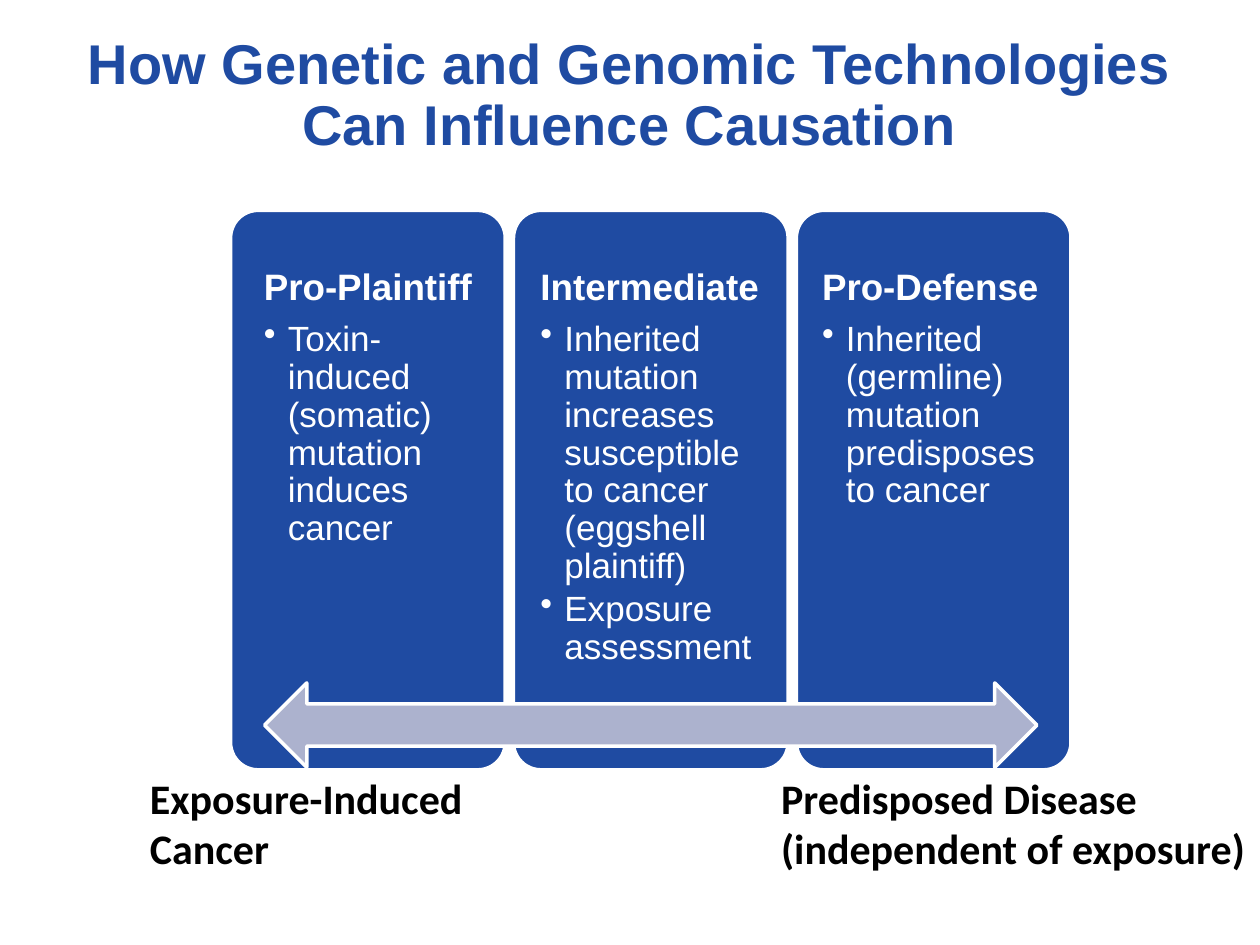
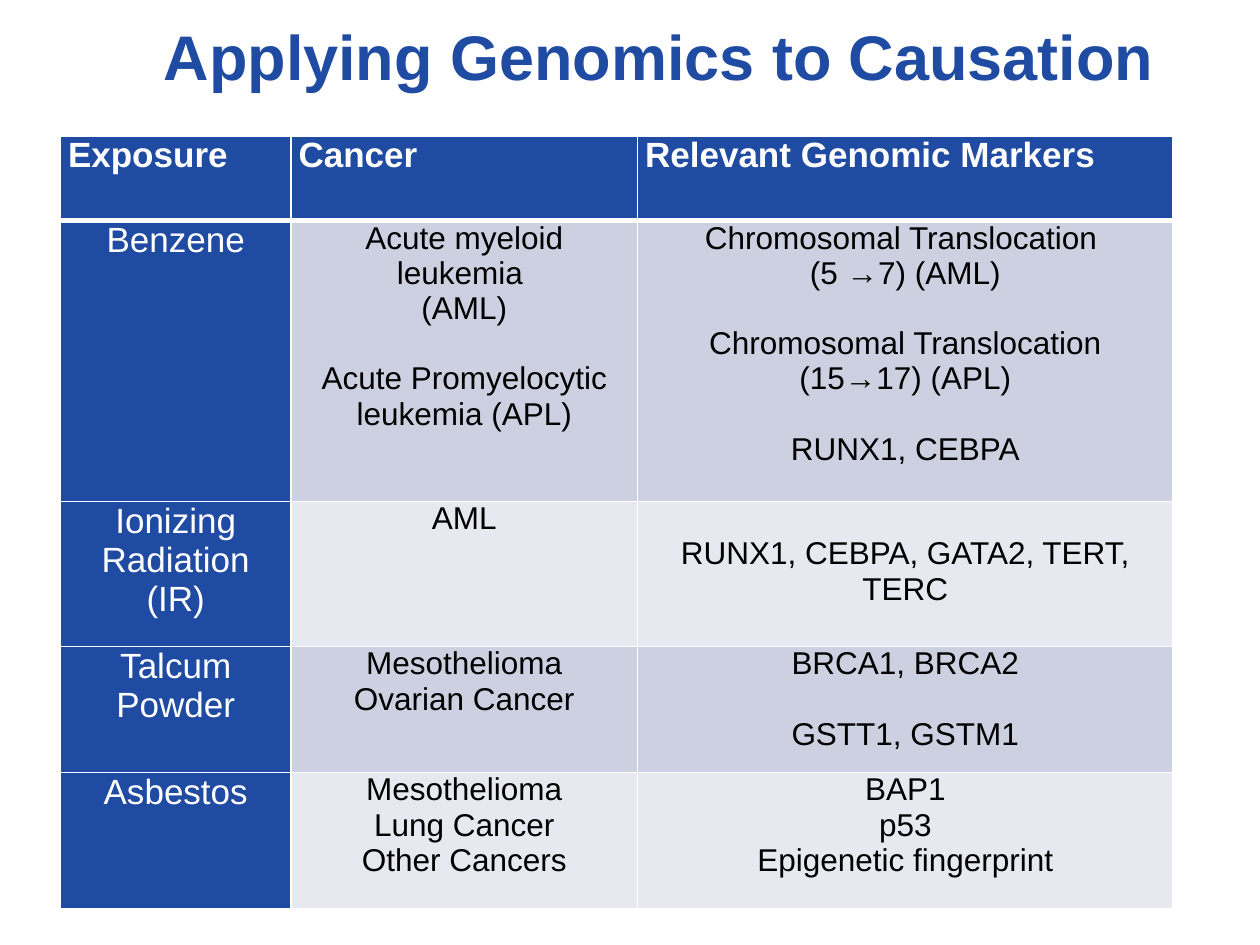
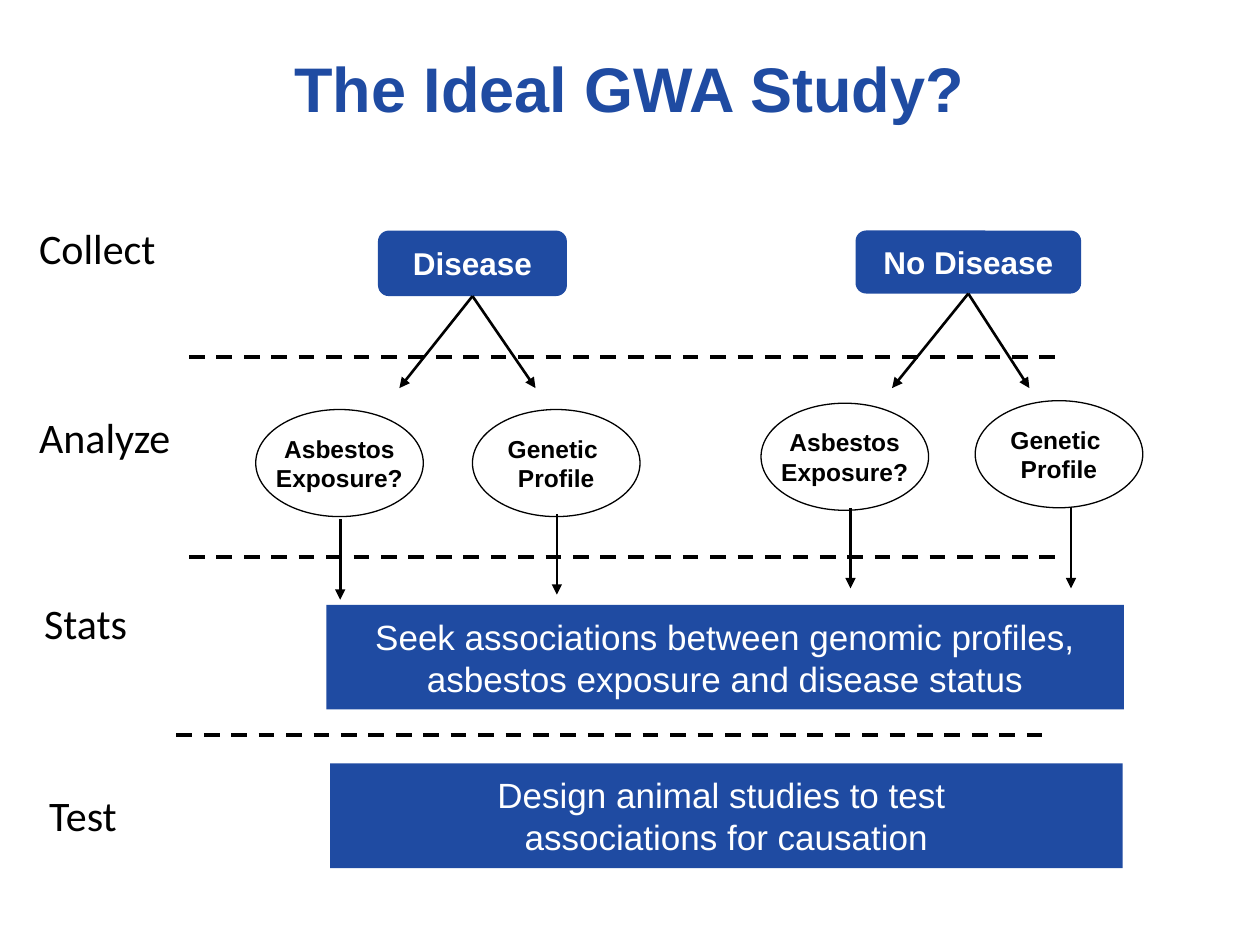
import pptx
import pptx.chart.data
import pptx.dml.color
import pptx.enum.dml
import pptx.enum.shapes
import pptx.enum.text
import pptx.oxml
import pptx.oxml.ns
import pptx.util
from lxml import etree

Inches, Pt = pptx.util.Inches, pptx.util.Pt
SHAPE = pptx.enum.shapes.MSO_SHAPE
ALIGN = pptx.enum.text.PP_ALIGN
ANCHOR = pptx.enum.text.MSO_ANCHOR

COLORS = {
    "blue": "1F4BA2", "white": "FFFFFF", "black": "000000",
    "arrow": "ACB2CE", "band_dark": "CDD0E0", "band_light": "E8E9F0",
}
CENTER = {"alignment": ALIGN.CENTER}
TITLE_LINES = {"alignment": ALIGN.CENTER, "line_spacing": 0.9}

# Slide 1 content: heading, bullets, left text inset
CAUSATION_TITLE = "How Genetic and Genomic Technologies Can Influence Causation"
CARDS = [
    ("Pro-Plaintiff", ["Toxin-induced (somatic) mutation induces cancer"], 0.2),
    ("Intermediate", [
        "Inherited mutation increases susceptible to cancer (eggshell plaintiff)",
        "Exposure assessment"], 0.15),
    ("Pro-Defense", ["Inherited (germline) mutation predisposes to cancer"], 0.14),
]
SPECTRUM_ENDS = [
    (1.17, 2.63, ["Exposure-Induced", "Cancer"]),
    (6.18, 3.77, ["Predisposed Disease", "(independent of exposure)"]),
]

# Slide 2 content: each cell is a list of groups of lines, set apart by a gap
MARKERS_TITLE = "Applying Genomics to Causation"
MARKERS_HEADER = ["Exposure", "Cancer", "Relevant Genomic Markers"]
MARKERS_ROWS = [
    ([["Benzene"]],
     [["Acute myeloid leukemia ", "(AML)"], ["Acute Promyelocytic leukemia (APL)"]],
     [["Chromosomal Translocation ", "(5 →7) (AML)"],
      ["Chromosomal Translocation", "(15→17) (APL)"], ["RUNX1, CEBPA"]]),
    ([["Ionizing Radiation", "(IR)"]],
     [["AML"]],
     [[], ["RUNX1, CEBPA, GATA2, TERT, TERC"]]),
    ([["Talcum Powder"]],
     [["Mesothelioma", "Ovarian Cancer"]],
     [["BRCA1, BRCA2"], ["GSTT1, GSTM1"]]),
    ([["Asbestos"]],
     [["Mesothelioma", "Lung Cancer", "Other Cancers"]],
     [["BAP1", "p53", "Epigenetic fingerprint"]]),
]
COLUMN_WIDTHS = [1.83, 2.75, 4.25]
ROW_HEIGHTS = [0.67, 2.23, 1.15, 1, 1.08]
GROUP_GAP = 20

# Slide 3 content
STUDY_TITLE = "The Ideal GWA Study?"
STAGES = [("Collect", 0.29, 1.75, 0.97), ("Analyze", 0.29, 3.25, 1.1),
          ("Stats", 0.33, 4.72, 0.71), ("Test", 0.37, 6.25, 0.62)]
DIVIDERS = [(1.5, 2.83), (1.5, 4.42), (1.4, 5.83)]
DIVIDER_WIDTH = 6.92
EXPOSURE = ["Asbestos", "Exposure?"]
PROFILE = ["Genetic ", "Profile"]
# Group name, its box, the x of its two arrow tips,
# and its factors: lines, left, top, arrow x, arrow top
GROUPS = [
    ("Disease", (3, 1.83, 1.5, 0.52), (3.17, 4.25),
     [(EXPOSURE, 2.03, 3.25, 2.7, 4.12), (PROFILE, 3.75, 3.25, 4.42, 4.08)]),
    ("No Disease", (6.79, 1.83, 1.79, 0.5), (7.08, 8.17),
     [(EXPOSURE, 6.04, 3.2, 6.75, 4.03), (PROFILE, 7.74, 3.18, 8.5, 4.03)]),
]
CONCLUSIONS = [
    ((2.59, 4.8, 6.33, 0.83), ["Seek associations between genomic profiles,",
                               "asbestos exposure and disease status"]),
    ((2.62, 6.06, 6.29, 0.83), ["Design animal studies to test ",
                                "associations for causation"]),
]


def rgb(name):
    return pptx.dml.color.RGBColor.from_string(COLORS[name])


def assign(target, values):
    for key, value in values.items():
        setattr(target, key, value)


def format_paragraph(paragraph, text, size, color, bold=False, face="Arial", layout=None):
    run = paragraph.add_run()
    run.text = text
    assign(paragraph, layout or {})
    assign(run.font, {"name": face, "size": Pt(size), "bold": bold})
    run.font.color.rgb = rgb(color)


def write(frame, lines, size, color, **style):
    for i, line in enumerate(lines):
        paragraph = frame.add_paragraph() if i else frame.paragraphs[0]
        format_paragraph(paragraph, line, size, color, **style)


def set_margins(target, left, top, right, bottom):
    assign(target, {"margin_left": Inches(left), "margin_top": Inches(top),
                    "margin_right": Inches(right), "margin_bottom": Inches(bottom)})


def add_text(slide, box, lines, size, color, margins=(0.02,) * 4, wrap=False,
             anchor=ANCHOR.TOP, **style):
    frame = slide.shapes.add_textbox(*map(Inches, box)).text_frame
    assign(frame, {"word_wrap": wrap, "vertical_anchor": anchor})
    set_margins(frame, *margins)
    write(frame, lines, size, color, **style)


def add_block(slide, kind, box, fill, line=None, line_width=0):
    block = slide.shapes.add_shape(kind, *map(Inches, box))
    block.shadow.inherit = False
    block.fill.solid()
    block.fill.fore_color.rgb = rgb(fill)
    if line:
        block.line.color.rgb = rgb(line)
        block.line.width = Pt(line_width)
    else:
        block.line.fill.background()
    return block


def label_block(block, lines, size, color, bold=False):
    assign(block.text_frame, {"word_wrap": False, "vertical_anchor": ANCHOR.MIDDLE})
    write(block.text_frame, lines, size, color, bold=bold, layout=CENTER)


def add_line(slide, start, end, width, arrow=False):
    line = slide.shapes.add_connector(
        pptx.enum.shapes.MSO_CONNECTOR.STRAIGHT, *map(Inches, (*start, *end)))
    line.line.color.rgb = rgb("black")
    line.line.width = Pt(width)
    if arrow:
        tail = etree.SubElement(line.line._get_or_add_ln(), pptx.oxml.ns.qn("a:tailEnd"))
        tail.set("type", "triangle")
    else:
        line.line.dash_style = pptx.enum.dml.MSO_LINE.DASH
    etree.SubElement(line._element.spPr, pptx.oxml.ns.qn("a:effectLst"))
    return line


def add_slide(deck, title, box, size):
    slide = deck.slides.add_slide(deck.slide_layouts[6])
    add_text(slide, box, [title], size, "blue", margins=(0.05, 0.05, 0.05, 0),
             wrap=True, anchor=ANCHOR.BOTTOM, bold=True, layout=TITLE_LINES)
    return slide


def add_bullet(paragraph):
    properties = paragraph._p.get_or_add_pPr()
    properties.set("marL", str(Inches(0.19)))
    properties.set("indent", str(-Inches(0.19)))
    etree.SubElement(properties, pptx.oxml.ns.qn("a:buChar")).set("char", "•")


def build_causation(deck):
    slide = add_slide(deck, CAUSATION_TITLE, (0.29, 0.25, 9.41, 1), 32)
    # Cards
    for i, (heading, bullets, inset) in enumerate(CARDS):
        card = add_block(slide, SHAPE.ROUNDED_RECTANGLE,
                         (1.83 + 2.245 * i, 1.67, 2.18, 4.44), "blue", "white", 2)
        card.adjustments[0] = 0.1
        frame = card.text_frame
        assign(frame, {"word_wrap": True, "vertical_anchor": ANCHOR.TOP})
        set_margins(frame, inset, 0.4, 0.1, 0.1)
        layout = {"alignment": ALIGN.LEFT, "line_spacing": 0.9}
        write(frame, [heading], 21, "white", bold=True,
              layout={**layout, "space_after": Pt(7.35)})
        for bullet in bullets:
            paragraph = frame.add_paragraph()
            add_bullet(paragraph)
            format_paragraph(paragraph, bullet, 20, "white",
                             layout={**layout, "space_after": Pt(3)})
    # Spectrum from exposure to predisposition
    add_block(slide, SHAPE.LEFT_RIGHT_ARROW, (2.1, 5.42, 6.13, 0.67), "arrow", "white", 2)
    for left, width, lines in SPECTRUM_ENDS:
        add_text(slide, (left, 6.11, width, 0.85), lines, 24, "black",
                 bold=True, face="Calibri")


def style_cell(cell, fill, top_border, bottom_border, top_margin=0):
    set_margins(cell, 0.06, top_margin, 0.06, 0)
    properties = cell._tc.get_or_add_tcPr()
    borders = {"lnL": 1, "lnR": 1, "lnT": top_border, "lnB": bottom_border}
    for side, width in borders.items():
        border = etree.SubElement(properties, pptx.oxml.ns.qn(f"a:{side}"), w=str(Pt(width)))
        paint = etree.SubElement(border, pptx.oxml.ns.qn("a:solidFill"))
        etree.SubElement(paint, pptx.oxml.ns.qn("a:srgbClr"), val=COLORS["white"])
    cell.fill.solid()
    cell.fill.fore_color.rgb = rgb(fill)


def build_markers(deck):
    slide = add_slide(deck, MARKERS_TITLE, (-0.08, -0.5, 10.62, 1.25), 36)
    markers = slide.shapes.add_table(
        len(ROW_HEIGHTS), len(COLUMN_WIDTHS), Inches(0.48), Inches(1.08),
        Inches(sum(COLUMN_WIDTHS)), Inches(sum(ROW_HEIGHTS))).table
    for column, width in zip(markers.columns, COLUMN_WIDTHS):
        column.width = Inches(width)
    for row, height in zip(markers.rows, ROW_HEIGHTS):
        row.height = Inches(height)
    # Header row
    for c, heading in enumerate(MARKERS_HEADER):
        cell = markers.cell(0, c)
        style_cell(cell, "blue", 1, 3)
        write(cell.text_frame, [heading], 20, "white", bold=True)
    # Exposure rows
    for r, row in enumerate(MARKERS_ROWS, 1):
        band = "band_dark" if r % 2 else "band_light"
        for c, groups in enumerate(row):
            cell = markers.cell(r, c)
            size, color, fill = (18, "black", band) if c else (20, "white", "blue")
            lowered = not groups[0]
            style_cell(cell, fill, 3 if r == 1 else 1, 1,
                       GROUP_GAP / 72 if lowered else 0)
            write(cell.text_frame, sum(groups, []), size, color, layout=CENTER)
            start = 0
            for group in groups:
                if start:
                    cell.text_frame.paragraphs[start].space_before = Pt(GROUP_GAP)
                start += len(group)


def build_study(deck):
    slide = add_slide(deck, STUDY_TITLE, (0.29, 0.09, 9.41, 0.91), 36)
    # Stages and the dashed lines between them
    for stage, left, top, width in STAGES:
        add_text(slide, (left, top, width, 0.44), [stage], 24, "black", face="Calibri")
    for left, y in DIVIDERS:
        add_line(slide, (left, y), (left + DIVIDER_WIDTH, y), 2.25)
    # Groups, their factors and arrows
    for name, box, tips, factors in GROUPS:
        group = add_block(slide, SHAPE.ROUNDED_RECTANGLE, box, "blue")
        label_block(group, [name], 18, "white", bold=True)
        left, top, width, height = box
        for tip in tips:
            branch = add_line(slide, (left + width / 2, top + height), (tip, 3.08),
                              1.5, arrow=True)
            branch.begin_connect(group, 2)
        for lines, left, top, arrow_x, arrow_top in factors:
            factor = add_block(slide, SHAPE.OVAL, (left, top, 1.33, 0.85),
                               "white", "black", 0.75)
            label_block(factor, lines, 14, "black", bold=True)
            add_line(slide, (arrow_x, arrow_top), (arrow_x, arrow_top + 0.64),
                     1.5, arrow=True)
    # Conclusions
    for box, lines in CONCLUSIONS:
        label_block(add_block(slide, SHAPE.RECTANGLE, box, "blue"), lines, 20, "white")


def main():
    deck = pptx.Presentation()
    assign(deck, {"slide_width": Inches(10), "slide_height": Inches(7.5)})
    build_causation(deck)
    build_markers(deck)
    build_study(deck)
    deck.save("out.pptx")


if __name__ == "__main__":
    main()
